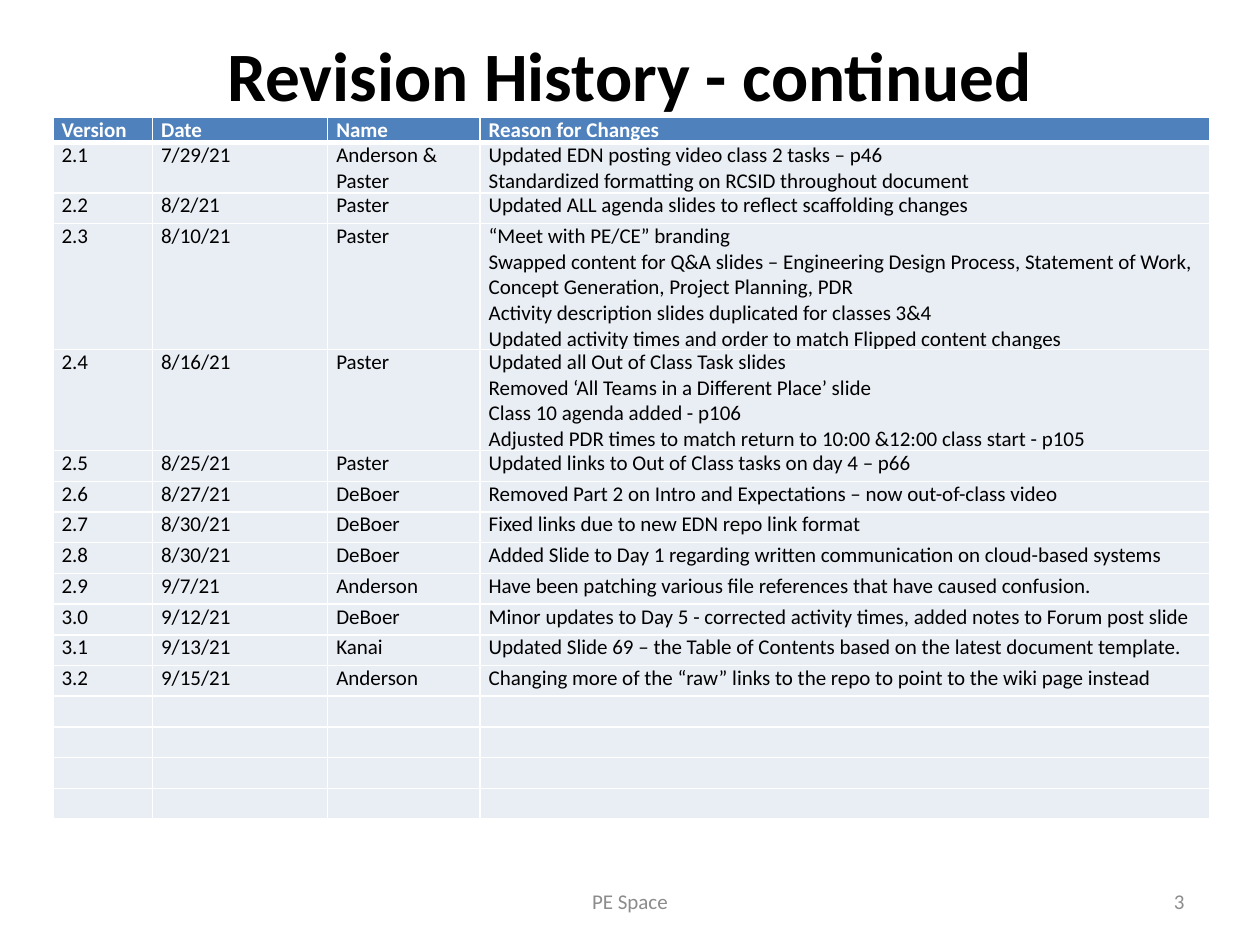
from dataclasses import dataclass
from lxml.etree import SubElement
from pptx import Presentation
from pptx.dml.color import RGBColor
from pptx.enum.text import MSO_ANCHOR, PP_ALIGN
from pptx.oxml.ns import qn
from pptx.slide import Slide
from pptx.table import _Cell
from pptx.text.text import _Paragraph
from pptx.util import Pt


@dataclass(frozen=True)
class Theme:
    """Colours, type sizes and font of the slide."""
    font: str = "Calibri"
    title: float = 39.6
    body: float = 12
    ink: str = "000000"
    white: str = "FFFFFF"
    grey: str = "8C8C8C"
    head: str = "4F81BD"
    band: str = "E9EDF4"


@dataclass(frozen=True)
class Label:
    """A line of text in a box measured in points."""
    text: str
    left: float
    top: float
    width: float
    height: float
    size: float
    color: str
    align: PP_ALIGN
    anchor: MSO_ANCHOR = MSO_ANCHOR.MIDDLE
    bold: bool = False


@dataclass(frozen=True)
class Entry:
    """One row of the revision table."""
    version: str = ""
    date: str = ""
    name: str = ""
    reasons: tuple[str, ...] = ("",)
    height: float = 17.55


THEME = Theme()
COLUMNS = (56.9, 100.1, 87.1, 416.9)
HEADER = Entry("Version", "Date", "Name", ("Reason for Changes",), 5)
ENTRIES = (
    Entry("2.1", "7/29/21", "Anderson & Paster", (
        "Updated EDN posting video class 2 tasks – p46",
        "Standardized formatting on RCSID throughout document"), 21.6),
    Entry("2.2", "8/2/21", "Paster", (
        "Updated ALL agenda slides to reflect scaffolding changes",)),
    Entry("2.3", "8/10/21", "Paster", (
        "“Meet with PE/CE” branding",
        "Swapped content for Q&A slides – Engineering Design Process, "
        "Statement of Work, Concept Generation, Project Planning, PDR",
        "Activity description slides duplicated for classes 3&4",
        "Updated activity times and order to match Flipped content changes")),
    Entry("2.4", "8/16/21", "Paster", (
        "Updated all Out of Class Task slides",
        "Removed ‘All Teams in a Different Place’ slide",
        "Class 10 agenda added - p106",
        "Adjusted PDR times to match return to 10:00 &12:00 class start - p105")),
    Entry("2.5", "8/25/21", "Paster", (
        "Updated links to Out of Class tasks on day 4 – p66",)),
    Entry("2.6", "8/27/21", "DeBoer", (
        "Removed Part 2 on Intro and Expectations – now out-of-class video",)),
    Entry("2.7", "8/30/21", "DeBoer", (
        "Fixed links due to new EDN repo link format",)),
    Entry("2.8", "8/30/21", "DeBoer", (
        "Added Slide to Day 1 regarding written communication on cloud-based systems",)),
    Entry("2.9", "9/7/21", "Anderson", (
        "Have been patching various file references that have caused confusion.",)),
    Entry("3.0", "9/12/21", "DeBoer", (
        "Minor updates to Day 5 - corrected activity times, added notes to Forum post slide",)),
    Entry("3.1", "9/13/21", "Kanai", (
        "Updated Slide 69 – the Table of Contents based on the latest document template.",)),
    Entry("3.2", "9/15/21", "Anderson", (
        "Changing more of the “raw” links to the repo to point to the wiki page instead",)),
) + (Entry(),) * 4
LABELS = (
    Label("Revision History - continued", 36, 18.25, 648, 90, THEME.title,
          THEME.ink, PP_ALIGN.CENTER, MSO_ANCHOR.TOP, True),
    Label("PE Space", 246, 500.5, 228, 28.75, THEME.body, THEME.grey, PP_ALIGN.CENTER),
    Label("3", 516, 500.5, 168, 28.75, THEME.body, THEME.grey, PP_ALIGN.RIGHT),
)


def add_run(para: _Paragraph, text: str, size: float, color: str, bold: bool) -> None:
    """Add one styled run to a paragraph."""
    run = para.add_run()
    run.text = text
    run.font.name = THEME.font
    run.font.size = Pt(size)
    run.font.bold = bold
    run.font.color.rgb = RGBColor.from_string(color)


def add_label(slide: Slide, label: Label) -> None:
    """Draw a text box holding one label."""
    box = slide.shapes.add_textbox(
        Pt(label.left), Pt(label.top), Pt(label.width), Pt(label.height))
    frame = box.text_frame
    frame.word_wrap = True
    frame.vertical_anchor = label.anchor
    frame.margin_top = frame.margin_bottom = 0
    para = frame.paragraphs[0]
    para.alignment = label.align
    add_run(para, label.text, label.size, label.color, label.bold)


def add_border(cell: _Cell, side: str, width: float) -> None:
    """Add a white border to one side of a cell."""
    props = cell._tc.get_or_add_tcPr()
    line = SubElement(props, qn(f"a:ln{side}"), w=str(Pt(width)))
    fill = SubElement(line, qn("a:solidFill"))
    SubElement(fill, qn("a:srgbClr"), val=THEME.white)


def fill_cell(cell: _Cell, lines: tuple[str, ...], row: int) -> None:
    """Style one cell and write its lines."""
    head = row == 0
    cell.margin_left = cell.margin_right = Pt(5)
    cell.margin_top = cell.margin_bottom = 0
    cell.vertical_anchor = MSO_ANCHOR.TOP
    for side in "LRTB":
        thick = (side == "B" and row == 0) or (side == "T" and row == 1)
        add_border(cell, side, 3 if thick else 1)
    cell.fill.solid()
    cell.fill.fore_color.rgb = RGBColor.from_string(THEME.head if head else THEME.band)
    frame = cell.text_frame
    for index, text in enumerate(lines):
        para = frame.add_paragraph() if index else frame.paragraphs[0]
        if text:
            add_run(para, text, THEME.body, THEME.white if head else THEME.ink, head)
        else:
            SubElement(para._p, qn("a:endParaRPr"), sz=str(int(THEME.body * 100)))


def add_history(slide: Slide, rows: tuple[Entry, ...]) -> None:
    """Draw the revision table."""
    table = slide.shapes.add_table(
        len(rows), len(COLUMNS), Pt(30.2), Pt(67), Pt(sum(COLUMNS)),
        Pt(sum(entry.height for entry in rows))).table
    table.horz_banding = False
    for column, width in zip(table.columns, COLUMNS):
        column.width = Pt(width)
    for index, entry in enumerate(rows):
        table.rows[index].height = Pt(entry.height)
        values = ((entry.version,), (entry.date,), (entry.name,), entry.reasons)
        for cell, lines in zip(table.rows[index].cells, values):
            fill_cell(cell, lines, index)


def main() -> None:
    """Build and save the slide."""
    deck = Presentation()
    deck.slide_width, deck.slide_height = Pt(720), Pt(540)
    slide = deck.slides.add_slide(deck.slide_layouts[6])
    title, *footer = LABELS
    add_label(slide, title)
    add_history(slide, (HEADER, *ENTRIES))
    for label in footer:
        add_label(slide, label)
    deck.save("out.pptx")


if __name__ == "__main__":
    main()
